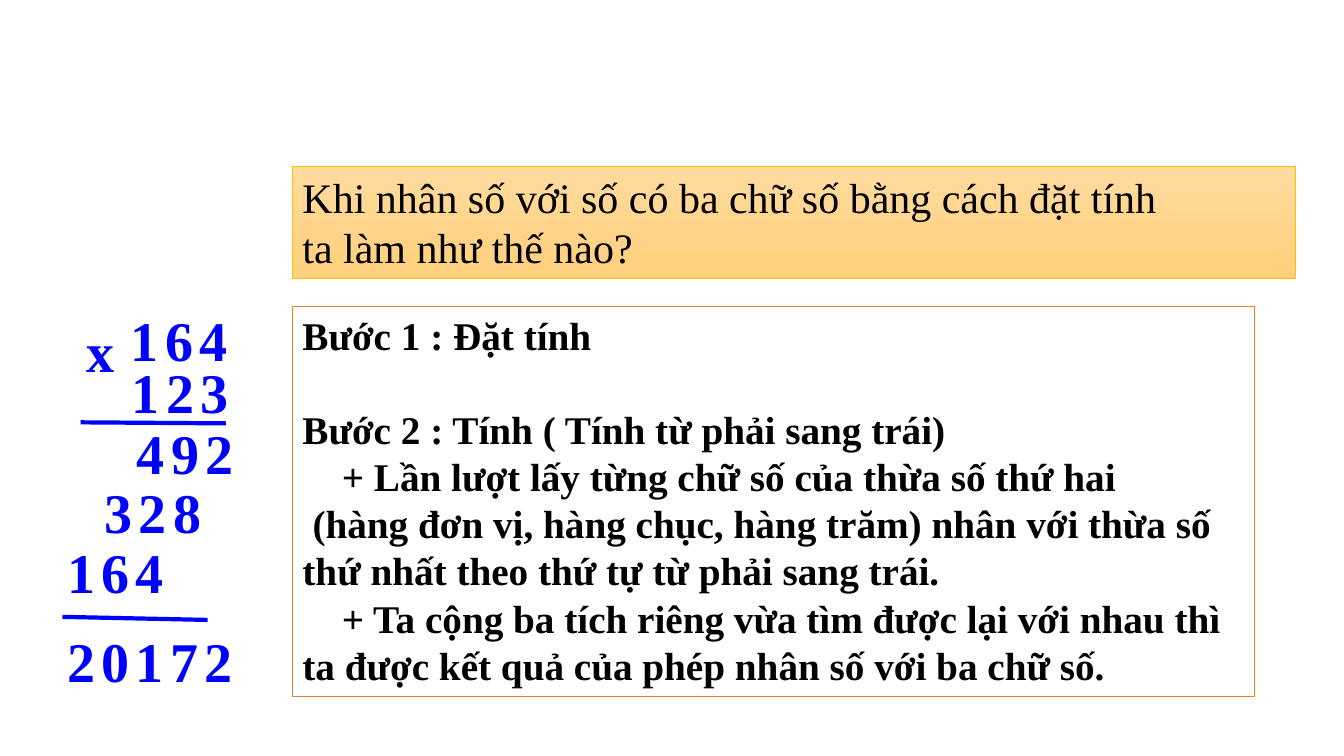
"""Build a slide on long multiplication by a three-digit number."""
import typing

import lxml.etree
import pptx
import pptx.dml.color
import pptx.enum.shapes
import pptx.enum.text
import pptx.oxml.ns
import pptx.util

Inches = pptx.util.Inches
Pt = pptx.util.Pt
qn = pptx.oxml.ns.qn

BLUE = "0000FF"
STEP = 0.34


class Row(typing.NamedTuple):
    text: str
    right: float
    top: float


class Rule(typing.NamedTuple):
    left: float
    top: float
    right: float
    end: float


class Para(typing.NamedTuple):
    text: str
    indent: float = 0
    before: float = 0


ROWS = [
    Row("164", 1.88, 2.98),
    Row("123", 1.89, 3.5),
    Row("x", 0.76, 3.09),
    Row("492", 1.94, 4.1),
    Row("328", 1.62, 4.69),
    Row("164", 1.25, 5.28),
    Row("20172", 1.93, 6.17),
]
RULES = [Rule(0.8, 4.19, 2.24, 4.2), Rule(0.62, 6.12, 2.06, 6.15)]
ASK = [
    Para("Khi nhân số với số có ba chữ số bằng cách đặt tính"),
    Para("ta làm như thế nào?"),
]
STEPS = [
    Para("Bước 1 : Đặt tính"),
    Para("Bước 2 : Tính ( Tính từ phải sang trái)", before=33.6),
    Para("+ Lần lượt lấy từng chữ số của thừa số thứ hai", 0.39),
    Para("(hàng đơn vị, hàng chục, hàng trăm) nhân với thừa số "
         "thứ nhất theo thứ tự từ phải sang trái.", 0.1),
    Para("+ Ta cộng ba tích riêng vừa tìm được lại với nhau thì "
         "ta được kết quả của phép nhân số với ba chữ số.", 0.39),
]


def color(code: str) -> pptx.dml.color.RGBColor:
    """Turn a hex string into a colour."""
    return pptx.dml.color.RGBColor.from_string(code)


def place(shape, left: float, top: float, width: float, height: float) -> None:
    """Set the place and size of a shape in inches."""
    shape.left, shape.top = Inches(left), Inches(top)
    shape.width, shape.height = Inches(width), Inches(height)


def write(shape, paras: list[Para], *, size: float, ink: str = "000000",
          bold: bool = False) -> None:
    """Fill a shape with formatted paragraphs."""
    frame = shape.text_frame
    frame.word_wrap = True
    frame.auto_size = pptx.enum.text.MSO_AUTO_SIZE.NONE
    frame.vertical_anchor = pptx.enum.text.MSO_ANCHOR.TOP
    frame.text = "\n".join(para.text for para in paras)
    for item, para in zip(frame.paragraphs, paras):
        item.alignment = pptx.enum.text.PP_ALIGN.LEFT
        item.space_before = Pt(para.before)
        props = item._p.get_or_add_pPr()
        props.set("marL", "0")
        props.set("indent", str(Inches(para.indent)))
        lxml.etree.SubElement(props, qn("a:buNone"))
        font = item.runs[0].font
        font.name, font.size, font.bold = "Times New Roman", Pt(size), bold
        font.color.rgb = color(ink)


def edge(line, code: str, width: float) -> None:
    """Set the colour and width of a line."""
    line.color.rgb = color(code)
    line.width = Pt(width)


def draw_row(slide, row: Row) -> None:
    """Set the digits of a row in columns from right to left."""
    for col, digit in enumerate(reversed(row.text)):
        box = slide.shapes.add_textbox(0, 0, 0, 0)
        place(box, row.right - col * STEP, row.top, STEP, 0.77)
        write(box, [Para(digit)], size=40, ink=BLUE, bold=True)


def draw_rule(slide, rule: Rule) -> None:
    """Draw a line under a block of digits."""
    line = slide.shapes.add_connector(
        pptx.enum.shapes.MSO_CONNECTOR.STRAIGHT, *map(Inches, rule))
    edge(line.line, BLUE, 3)
    lxml.etree.SubElement(line._element.spPr, qn("a:effectLst"))


def main() -> None:
    """Build and save the deck."""
    deck = pptx.Presentation()
    deck.slide_width, deck.slide_height = Inches(13.33), Inches(7.5)
    slide = deck.slides.add_slide(deck.slide_layouts[1])
    title, body = slide.placeholders

    place(title, 2.9, 1.65, 9.95, 1.11)
    title.fill.gradient()
    title.fill.gradient_angle = 270
    for stop, code in zip(title.fill.gradient_stops, ("FFDB9E", "FFD07C")):
        stop.color.rgb = color(code)
    edge(title.line, "FFC000", 0.5)
    write(title, ASK, size=30)

    place(body, 2.9, 3.04, 9.54, 3.87)
    body.fill.solid()
    body.fill.fore_color.rgb = color("FFFFFF")
    edge(body.line, "ED7D31", 1)
    write(body, STEPS, size=28, bold=True)

    for row in ROWS:
        draw_row(slide, row)
    for rule in RULES:
        draw_rule(slide, rule)
    deck.save("out.pptx")


if __name__ == "__main__":
    main()
